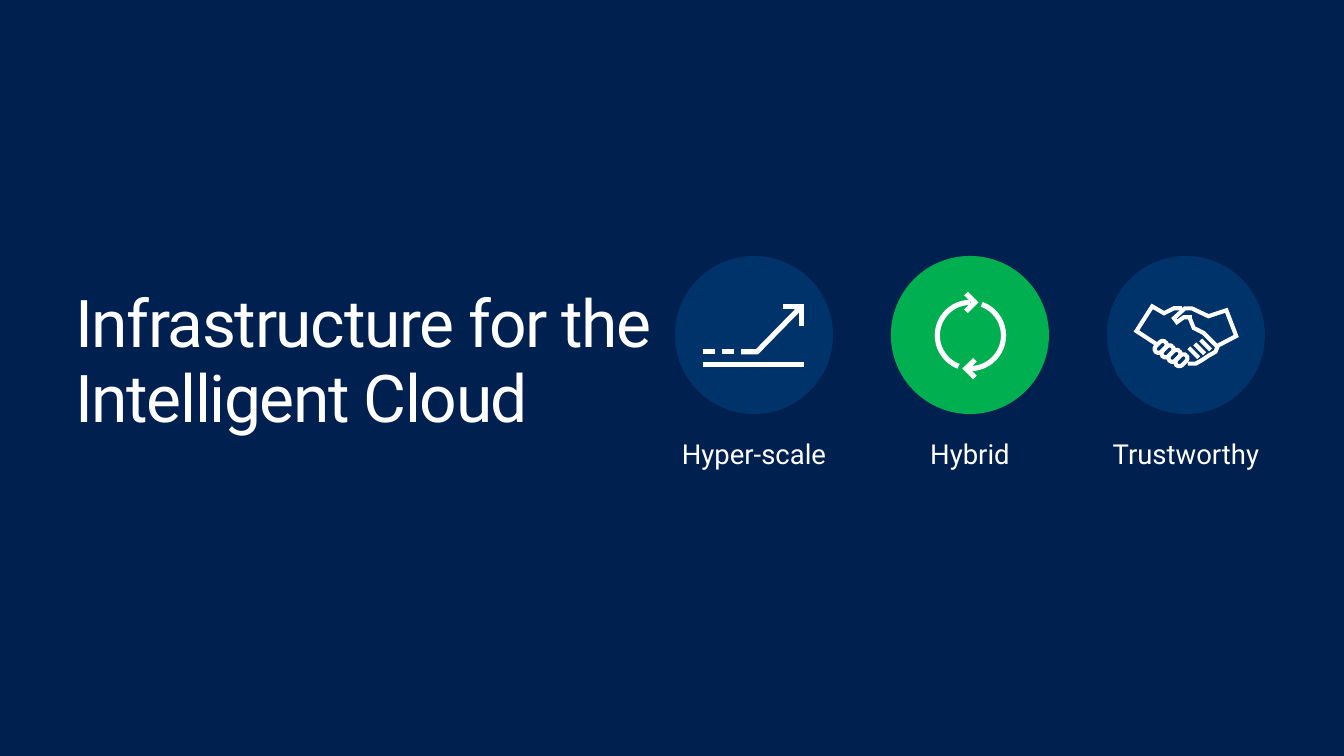
"""Build a slide with a title and three round icons with labels."""
from lxml.etree import SubElement
from pptx import Presentation
from pptx.dml.color import RGBColor
from pptx.enum.shapes import MSO_CONNECTOR, MSO_SHAPE
from pptx.enum.text import MSO_ANCHOR, MSO_AUTO_SIZE, PP_ALIGN
from pptx.oxml.ns import qn
from pptx.util import Inches, Pt

COLORS = {"back": "002050", "disc": "00336A", "focus": "00B050", "ink": "FFFFFF"}
FONT = "Roboto"
TITLE = ["Infrastructure for the", "Intelligent Cloud"]
UNIT = 0.01

GROWTH = [
    [(128, 71), (128, 51), (109, 51)],
    [(28, 97), (41, 97)],
    [(48, 97), (60, 97)],
    [(67, 97), (83, 97), (128, 51)],
    [(28, 110), (131, 110)],
]
CYCLE = [
    [(76, 56), (85, 47), (76, 38)],
    [(81, 47), (85, 47)],
    [(85, 105), (76, 114), (85, 123)],
    [(81, 114), (76, 114)],
]
RING = (47, 47, 67)
ARCS = [(290, 90), (111, 270)]
HANDS = [
    [(50, 89), (30, 76), (46, 51), (58, 58), (68, 53), (76, 53)],
    [(86, 62), (78, 62), (71, 67), (68, 63), (79, 53), (86, 53),
     (103, 61), (121, 55), (131, 81), (112, 91)],
    [(84, 63), (88, 73), (98, 78), (112, 92), (110, 97), (103, 101),
     (97, 105), (90, 109), (82, 109)],
]
GAPS = [[(95 - 6 * n, 85 + 4 * n), (105 - 6 * n, 95 + 4 * n)] for n in range(3)]
KNUCKLES = [(54.5 + 7 * n, 92 + 4.5 * n) for n in range(4)]
KNUCKLE = (14, 8)
ITEMS = [
    ("Hyper-scale", "disc", GROWTH, 3.75, [], []),
    ("Hybrid", "focus", CYCLE, 3.75, ARCS, []),
    ("Trustworthy", "disc", HANDS + GAPS, 3, [], KNUCKLES),
]
FIRST, LAST, TOP, SIZE = 6.83, 11.2, 2.59, 1.6
LABEL_TOP, LABEL_WIDE, LABEL_HIGH = 4.46, 2.39, 0.73


def color(name):
    return RGBColor.from_string(COLORS[name])


def write(para, text, size):
    run = para.add_run()
    run.text = text
    run.font.name, run.font.size = FONT, Pt(size)
    run.font.color.rgb = color("ink")
    return run


def stroke(shape, width):
    shape.line.color.rgb = color("ink")
    shape.line.width = Pt(width)
    props = shape._element.spPr
    SubElement(props.find(qn("a:ln")), qn("a:miter"), lim="800000")
    SubElement(props, qn("a:effectLst"))


def draw_path(shapes, points, left, width):
    if len(points) == 2:
        ends = [Inches(base + n * UNIT) for pt in points for base, n in zip((left, TOP), pt)]
        shape = shapes.add_connector(MSO_CONNECTOR.STRAIGHT, *ends)
    else:
        pen = shapes.build_freeform(*points[0], scale=Inches(UNIT))
        pen.add_line_segments(points[1:], close=False)
        shape = pen.convert_to_shape(Inches(left), Inches(TOP))
        shape.fill.background()
    stroke(shape, width)


def add_part(shapes, kind, left, x, y, wide, high, width):
    part = shapes.add_shape(kind, Inches(left + x * UNIT), Inches(TOP + y * UNIT),
                            Inches(wide * UNIT), Inches(high * UNIT))
    part.fill.background()
    stroke(part, width)
    return part


def draw_item(slide, left, label, fill, paths, width, arcs, knuckles):
    shapes = slide.shapes.add_group_shape().shapes
    disc = shapes.add_shape(MSO_SHAPE.OVAL, Inches(left), Inches(TOP), Inches(SIZE), Inches(SIZE))
    disc.shadow.inherit = False
    disc.fill.solid()
    disc.fill.fore_color.rgb = color(fill)
    disc.line.fill.background()
    box = shapes.add_textbox(Inches(left + (SIZE - LABEL_WIDE) / 2), Inches(LABEL_TOP),
                             Inches(LABEL_WIDE), Inches(LABEL_HIGH))
    frame = box.text_frame
    frame.word_wrap = True
    frame.margin_left = frame.margin_right = frame.margin_top = frame.margin_bottom = 0
    para = frame.paragraphs[0]
    para.alignment, para.line_spacing = PP_ALIGN.CENTER, 0.9
    write(para, label, 20)
    for points in paths:
        draw_path(shapes, points, left, width)
    for angles in arcs:
        x, y, size = RING
        arc = add_part(shapes, MSO_SHAPE.ARC, left, x, y, size, size, width)
        for index, angle in enumerate(angles):
            arc.adjustments[index] = angle * 0.6
    for x, y in knuckles:
        wide, high = KNUCKLE
        pill = add_part(shapes, MSO_SHAPE.ROUNDED_RECTANGLE, left,
                        x - wide / 2, y - high / 2, wide, high, width)
        pill.adjustments[0] = 0.5
        pill.rotation = 315


def draw_title(title):
    title.left, title.top = Inches(0.66), Inches(2.86)
    title.width, title.height = Inches(11.58), Inches(1.64)
    frame = title.text_frame
    frame.word_wrap = True
    frame.auto_size = MSO_AUTO_SIZE.SHAPE_TO_FIT_TEXT
    frame.vertical_anchor = MSO_ANCHOR.TOP
    para = frame.paragraphs[0]
    para.alignment, para.line_spacing, para.space_after = PP_ALIGN.LEFT, 0.95, Pt(12)
    for index, line in enumerate(TITLE):
        if index:
            para.add_line_break()
        run = write(para, line, 48)
        run.font._element.set("spc", "-100")


def main():
    deck = Presentation()
    deck.slide_width, deck.slide_height = Inches(13.6), Inches(7.65)
    slide = deck.slides.add_slide(deck.slide_layouts[5])
    slide.background.fill.solid()
    slide.background.fill.fore_color.rgb = color("back")
    draw_title(slide.shapes.title)
    step = (LAST - FIRST) / (len(ITEMS) - 1)
    for index, item in enumerate(ITEMS):
        draw_item(slide, FIRST + index * step, *item)
    deck.save("out.pptx")


if __name__ == "__main__":
    main()
